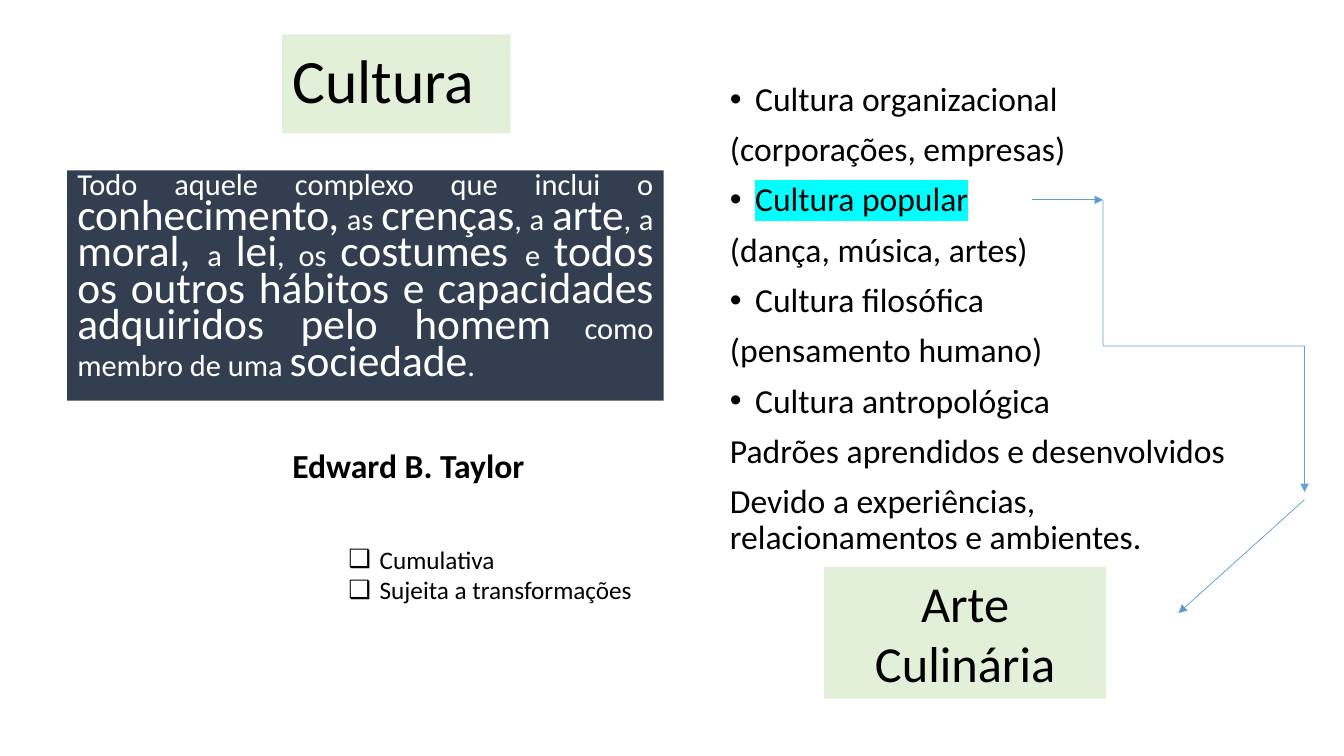
from itertools import cycle
from lxml.etree import SubElement as add_node
from pptx import Presentation
from pptx.dml.color import RGBColor
from pptx.enum.shapes import MSO_CONNECTOR as Connector
from pptx.enum.text import MSO_ANCHOR as Anchor, MSO_AUTO_SIZE as Fit, PP_ALIGN as Align
from pptx.oxml.ns import qn
from pptx.util import Emu, Inches, Pt

COLUMNS = 160
BLACK, WHITE, GREEN, NAVY, CYAN, BLUE = "000000", "FFFFFF", "E2F0D9", "333F50", "00FFFF", "5B9BD5"
QUOTE = [
    "Todo aquele complexo que inclui o ", "conhecimento,", " as ", "crenças", ", a ", "arte",
    ", a ", "moral, ", "a ", "lei", ", os ", "costumes ", "e ",
    "todos os outros hábitos e capacidades adquiridos pelo homem",
    " como membro de uma ", "sociedade", ". ",
]
KINDS = [
    ("•", "Cultura organizacional"), (None, "(corporações, empresas)"),
    ("•", "Cultura popular"), (None, "(dança, música, artes)"),
    ("•", "Cultura filosófica"), (None, "(pensamento humano)"),
    ("•", "Cultura antropológica"), (None, "Padrões aprendidos e desenvolvidos"),
    (None, "Devido a experiências, relacionamentos e ambientes."),
]
TRAITS = ["Cumulativa", "Sujeita a transformações"]


def rgb(code):
    """Turn a hex string into a colour."""
    return RGBColor.from_string(code)


def apply(target, values):
    """Set each named attribute on the target."""
    for name, value in values.items():
        setattr(target, name, value)


class Composer:
    """Holds the style and the current page."""

    font = "Calibri"

    def __init__(self, deck, layout):
        """Add a page with the given layout."""
        self.unit = deck.slide_width / COLUMNS
        self.page = deck.slides.add_slide(deck.slide_layouts[layout])
        self.holders = {holder.placeholder_format.idx: holder for holder in self.page.placeholders}

    def grid(self, *cells):
        """Convert square grid cells to lengths."""
        return [Emu(round(cell * self.unit)) for cell in cells]

    def dress(self, box, fill, anchor):
        """Give a box its fill and text frame settings."""
        if fill:
            box.fill.solid()
            box.fill.fore_color.rgb = rgb(fill)
        apply(box.text_frame, {"word_wrap": True, "auto_size": Fit.NONE, "vertical_anchor": anchor})
        return box.text_frame

    def placeholder(self, index, cells, fill=None, anchor=Anchor.TOP):
        """Place a template placeholder on the grid."""
        box = self.holders.pop(index)
        apply(box, dict(zip(("left", "top", "width", "height"), self.grid(*cells))))
        return self.dress(box, fill, anchor)

    def text_box(self, cells, fill=None):
        """Add a text box on the grid."""
        return self.dress(self.page.shapes.add_textbox(*self.grid(*cells)), fill, Anchor.TOP)

    def add_para(self, frame, spans, bullet=None, indent=0.0, color=BLACK, bold=False, mark=None, **layout):
        """Add one paragraph of (text, size) spans."""
        para = frame.paragraphs[0]
        if para.runs:
            para = frame.add_paragraph()
        apply(para, {"alignment": Align.LEFT, "line_spacing": 0.9, "space_before": Pt(10)} | layout)
        props = para._p.get_or_add_pPr()
        props.set("marL", str(Inches(indent)))
        props.set("indent", str(-Inches(indent)))
        if bullet:
            add_node(props, qn("a:buFont"), typeface="Arial")
            add_node(props, qn("a:buChar"), char=bullet)
        else:
            add_node(props, qn("a:buNone"))
        for text, size in spans:
            span = para.add_run()
            span.text = text
            apply(span.font, {"size": Pt(size), "name": self.font, "bold": bold})
            span.font.color.rgb = rgb(color)
            if mark:
                run_props = span._r.get_or_add_rPr()
                highlight = add_node(run_props, qn("a:highlight"))
                add_node(highlight, qn("a:srgbClr"), val=mark)
                run_props.find(qn("a:solidFill")).addnext(highlight)

    def arrow(self, cells, kind=Connector.STRAIGHT, turn=0, opacity=100):
        """Draw a thin arrow, turned by some degrees if asked."""
        line = self.page.shapes.add_connector(kind, *self.grid(*cells))
        line.line.width = Pt(0.5)
        line.line.color.rgb = rgb(BLUE)
        props = line._element.spPr
        if turn:
            props.find(qn("a:xfrm")).set("rot", str(turn * 60000))
        stroke = props.find(qn("a:ln"))
        if opacity < 100:
            add_node(stroke.find(".//" + qn("a:srgbClr")), qn("a:alpha"), val=str(opacity * 1000))
        add_node(stroke, qn("a:tailEnd"), type="triangle")
        add_node(props, qn("a:effectLst"))

    def clear_unused(self):
        """Remove the placeholders left empty."""
        for holder in self.holders.values():
            holder._element.getparent().remove(holder._element)


def main():
    """Build and save the deck."""
    deck = Presentation()
    apply(deck, {"slide_width": Inches(13.33), "slide_height": Inches(7.5)})
    slide = Composer(deck, 4)
    single = {"line_spacing": 1.0, "space_before": Pt(0)}

    title = slide.placeholder(0, (33.6, 4.1, 27.2, 11.8), GREEN, Anchor.MIDDLE)
    slide.add_para(title, [("Cultura", 44)], space_before=Pt(0))

    quote = slide.placeholder(2, (8, 20.3, 71, 27.4), NAVY)
    slide.add_para(quote, zip(QUOTE, cycle((21.7, 31))), color=WHITE,
                   alignment=Align.JUSTIFY, line_spacing=0.7)

    author = slide.placeholder(1, (33.6, 51.5, 34.6, 7), anchor=Anchor.BOTTOM)
    slide.add_para(author, [("Edward B. Taylor", 24)], bold=True)

    kinds = slide.placeholder(4, (85.7, 9.2, 61.5, 44))
    for bullet, text in KINDS:
        slide.add_para(kinds, [(text, 24)], bullet, 0.25 if bullet else 0,
                       mark=CYAN if text == "Cultura popular" else None)

    traits = slide.text_box((40.3, 64.2, 38, 8.5))
    for text in TRAITS:
        slide.add_para(traits, [(text, 18)], "❑", 0.31, **single)

    slide.arrow((160.7, 29.2, 125.9, 53.2), Connector.ELBOW, turn=270, opacity=92)
    slide.arrow((122.9, 23.8, 131.3, 23.8))
    slide.arrow((155.3, 59.5, 140.3, 73))

    dish = slide.text_box((98.1, 67.5, 33.6, 15.7), GREEN)
    slide.add_para(dish, [("Arte Culinária", 36)], alignment=Align.CENTER, **single)

    slide.clear_unused()
    deck.save("out.pptx")


if __name__ == "__main__":
    main()
